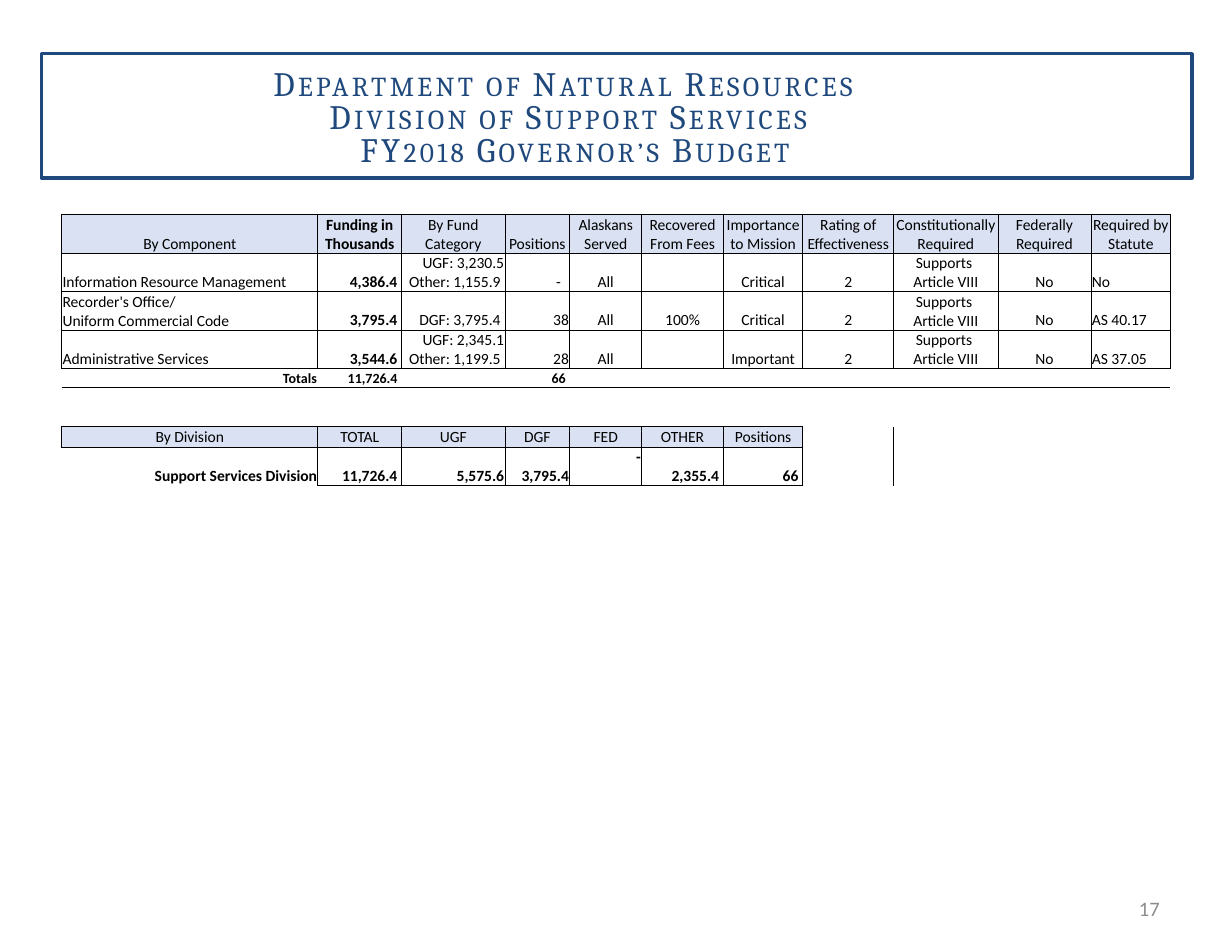
from lxml.etree import SubElement
from pptx import Presentation
from pptx.dml.color import RGBColor
from pptx.enum.shapes import MSO_SHAPE
from pptx.enum.text import MSO_ANCHOR, PP_ALIGN
from pptx.oxml.ns import qn
from pptx.util import Cm, Pt

NAVY = RGBColor(0x1F, 0x49, 0x7D)
BLACK = RGBColor(0x00, 0x00, 0x00)
WHITE = RGBColor(0xFF, 0xFF, 0xFF)
GRAY = RGBColor(0x8C, 0x8C, 0x8C)
PALE_BLUE = RGBColor(0xD9, 0xE1, 0xF2)

PLAIN_TABLE_STYLE = "{2D5ABB26-0587-4C30-8999-92F81FD0307C}"
ALIGNMENTS = {"L": PP_ALIGN.LEFT, "C": PP_ALIGN.CENTER, "R": PP_ALIGN.RIGHT}
SIDES = {"a:lnL": (0, -1), "a:lnR": (0, 1), "a:lnT": (-1, 0), "a:lnB": (1, 0)}

TITLE_LINES = [
    "Department of Natural Resources",
    "Division of Support Services",
    "FY2018 Governor’s Budget",
]
COLUMN_WIDTHS = [5.8, 1.9, 2.34, 1.47, 1.63, 1.85, 1.8, 2.06, 2.36, 2.11, 1.8]
ROW_HEIGHTS = [0.87, 0.87, 0.87, 0.87, 0.43, 0.43, 0.43, 0.46, 0.87]
BUDGET_ROWS = [
    ["By Component", "Funding in Thousands", "By Fund Category", "Positions",
     "Alaskans Served", "Recovered From Fees", "Importance to Mission",
     "Rating of Effectiveness", "Constitutionally Required",
     "Federally Required", "Required by Statute"],
    ["Information Resource Management", "4,386.4 ",
     "UGF: 3,230.5\vOther: 1,155.9 ", "-", "All", "", "Critical", "2",
     "Supports \vArticle VIII", "No", "No"],
    ["Recorder's Office/\nUniform Commercial Code", "3,795.4 ",
     "DGF: 3,795.4 ", "38", "All", "100%", "Critical", "2",
     "Supports \vArticle VIII", "No", "AS 40.17"],
    ["Administrative Services", "3,544.6 ",
     "UGF: 2,345.1\vOther: 1,199.5 ", "28", "All", "", "Important", "2",
     "Supports \vArticle VIII", "No", "AS 37.05"],
    ["Totals", "11,726.4 ", "", "66 "],
    [],
    [],
    ["By Division", "TOTAL", "UGF", "DGF", "FED", "OTHER", "Positions"],
    ["Support Services Division", "11,726.4 ", "5,575.6", "3,795.4", "-",
     "2,355.4 ", "66 "],
]
HEADER_ROWS = (0, 7)
COMPONENT_ROWS = range(1, 4)
TOTALS_ROW = 4
DIVISION_ROW = 8
DIVISION_COLUMNS = 7


def style_text(para, font_name, size, color, bold=False):
    para.font.name = font_name
    para.font.size = Pt(size)
    para.font.color.rgb = color
    para.font.bold = bold


def add_title(page, left, top, width, height):
    frame = page.shapes.add_shape(
        MSO_SHAPE.RECTANGLE, Cm(left), Cm(top), Cm(width), Cm(height))
    frame.shadow.inherit = False
    frame.fill.background()
    frame.line.color.rgb = NAVY
    frame.line.width = Pt(2.25)

    box = page.shapes.add_textbox(
        Cm(left + 0.69), Cm(top + 0.25), Cm(width - 1.4), Cm(height + 0.46))
    box.text_frame.word_wrap = True
    box.text_frame.text = "\n".join(TITLE_LINES)
    for para in box.text_frame.paragraphs:
        para.alignment = PP_ALIGN.CENTER
        para.line_spacing = 0.8
        for span in para.runs:
            style_text(span, "Cambria", 22, NAVY)
            properties = span.font._element
            properties.set("cap", "small")
            properties.set("spc", "220")


def is_boxed(row, column):
    if column < 0 or column >= len(COLUMN_WIDTHS):
        return False
    if row in COMPONENT_ROWS or row == 0:
        return True
    if row == 7:
        return column < DIVISION_COLUMNS
    return row == DIVISION_ROW and 0 < column < DIVISION_COLUMNS


def draw_borders(cell, row, column):
    properties = cell._tc.get_or_add_tcPr()
    position = 0
    for tag, (down, across) in SIDES.items():
        if is_boxed(row, column) or is_boxed(row + down, column + across):
            line = SubElement(properties, qn(tag), w=str(Pt(0.5)))
            fill = SubElement(line, qn("a:solidFill"))
            SubElement(fill, qn("a:srgbClr"), val=str(BLACK))
            properties.insert(position, line)
            position += 1


def row_alignments(row):
    if row in HEADER_ROWS:
        return "C" * len(COLUMN_WIDTHS)
    if row in COMPONENT_ROWS:
        return "LRRRCCCCCCL"
    return "R" * len(COLUMN_WIDTHS)


def fill_cell(cell, row, column, text):
    cell.text = text
    cell.vertical_anchor = MSO_ANCHOR.BOTTOM
    cell.margin_left = cell.margin_right = cell.margin_top = Cm(0.02)
    cell.margin_bottom = 0
    bold = row in (TOTALS_ROW, DIVISION_ROW) or (column == 1 and row < TOTALS_ROW)
    size = 9 if row == TOTALS_ROW else 10
    for para in cell.text_frame.paragraphs:
        para.alignment = ALIGNMENTS[row_alignments(row)[column]]
        style_text(para, "Calibri", size, BLACK, bold)
        for span in para.runs:
            style_text(span, "Calibri", size, BLACK, bold)
        if not text:
            SubElement(para._p, qn("a:endParaRPr"), sz=str(size * 100))
    if row in HEADER_ROWS and text:
        cell.fill.solid()
        cell.fill.fore_color.rgb = PALE_BLUE
    elif row in COMPONENT_ROWS or (row == TOTALS_ROW and column < 4):
        cell.fill.solid()
        cell.fill.fore_color.rgb = WHITE
    else:
        cell.fill.background()
    draw_borders(cell, row, column)


def add_budget_table(page, left, top, width, height):
    frame = page.shapes.add_table(
        len(ROW_HEIGHTS), len(COLUMN_WIDTHS),
        Cm(left), Cm(top), Cm(width), Cm(height))
    table = frame.table
    table.first_row = False
    table.horz_banding = False
    table._tbl.tblPr.find(qn("a:tableStyleId")).text = PLAIN_TABLE_STYLE
    for column, share in zip(table.columns, COLUMN_WIDTHS):
        column.width = Cm(share * width / sum(COLUMN_WIDTHS))
    for row, share in zip(table.rows, ROW_HEIGHTS):
        row.height = Cm(share * height / sum(ROW_HEIGHTS))
    for row, texts in enumerate(BUDGET_ROWS):
        for column in range(len(COLUMN_WIDTHS)):
            text = texts[column] if column < len(texts) else ""
            fill_cell(table.cell(row, column), row, column, text)
    table.cell(1, 3).margin_right = Cm(0.2)
    table.cell(DIVISION_ROW, 4).vertical_anchor = MSO_ANCHOR.TOP


def add_page_number(page, left, top, width, height):
    box = page.shapes.add_textbox(Cm(left), Cm(top), Cm(width), Cm(height))
    box.text_frame.word_wrap = True
    box.text_frame.vertical_anchor = MSO_ANCHOR.MIDDLE
    para = box.text_frame.paragraphs[0]
    para.alignment = PP_ALIGN.RIGHT
    span = para.add_run()
    span.text = "17"
    style_text(span, "Calibri", 13.2, GRAY)


def main():
    deck = Presentation()
    deck.slide_width = Cm(27.94)
    deck.slide_height = Cm(21.59)
    page = deck.slides.add_slide(deck.slide_layouts[6])
    add_page_number(page, 20.02, 20.02, 6.53, 1.14)
    add_title(page, 0.94, 1.22, 26.09, 2.82)
    add_budget_table(page, 1.4, 4.87, 25.15, 6.12)
    deck.save("out.pptx")


if __name__ == "__main__":
    main()
